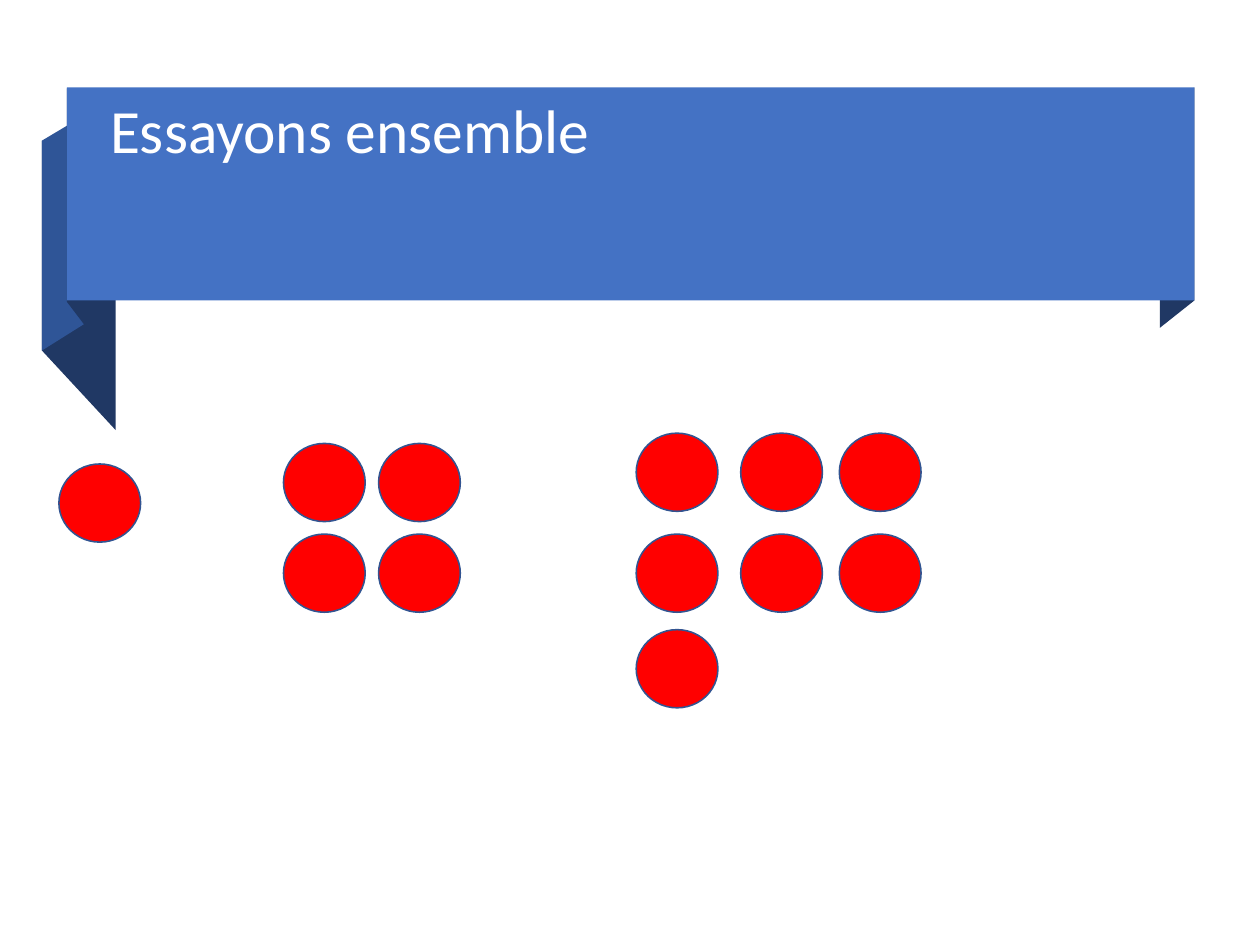
from itertools import product

from pptx import Presentation
from pptx.dml.color import RGBColor
from pptx.enum.shapes import MSO_SHAPE
from pptx.enum.text import MSO_ANCHOR, MSO_AUTO_SIZE, PP_ALIGN
from pptx.util import Cm, Pt

BLUE = RGBColor(0x44, 0x72, 0xC4)
MID = RGBColor(0x2F, 0x55, 0x97)
NAVY = RGBColor(0x20, 0x38, 0x64)
RED = RGBColor(0xFF, 0x00, 0x00)
EDGE = RGBColor(0x32, 0x54, 0x91)
WHITE = RGBColor(0xFF, 0xFF, 0xFF)


class Page:
    font = "Calibri"
    dot_size = Cm(1.83), Cm(1.75)

    def __init__(self, deck):
        self.slide = deck.slides.add_slide(deck.slide_layouts[5])
        self.shapes = self.slide.shapes

    def paint(self, shape, fill, line=None):
        shape.shadow.inherit = False
        shape.fill.solid()
        shape.fill.fore_color.rgb = fill
        if line is None:
            shape.line.fill.background()
        else:
            shape.line.color.rgb = line
            shape.line.width = Pt(1)

    def fold(self, points, fill):
        start, *rest = [(Cm(x), Cm(y)) for x, y in points]
        pen = self.shapes.build_freeform(*start)
        pen.add_line_segments(rest, close=True)
        self.paint(pen.convert_to_shape(), fill)

    def band(self, left, top, width, height, fill):
        box = Cm(left), Cm(top), Cm(width), Cm(height)
        self.paint(self.shapes.add_shape(MSO_SHAPE.RECTANGLE, *box), fill)

    def title(self, text, left, top, width, height):
        head = self.shapes.title
        head.left, head.top = Cm(left), Cm(top)
        head.width, head.height = Cm(width), Cm(height)
        frame = head.text_frame
        frame.text = text
        frame.word_wrap = True
        frame.auto_size = MSO_AUTO_SIZE.NONE
        frame.vertical_anchor = MSO_ANCHOR.MIDDLE
        line = frame.paragraphs[0]
        line.alignment = PP_ALIGN.LEFT
        line.line_spacing = 0.9
        line.font.name = self.font
        line.font.size = Pt(39)
        line.font.color.rgb = WHITE
        self.shapes._spTree.append(head._element)

    def dots(self, spots):
        for x, y in spots:
            dot = self.shapes.add_shape(MSO_SHAPE.OVAL, Cm(x), Cm(y), *self.dot_size)
            self.paint(dot, RED, EDGE)


def main():
    deck = Presentation()
    deck.slide_width, deck.slide_height = Cm(28.22), Cm(21.16)
    page = Page(deck)

    page.fold([(2.59, 9.63), (0.94, 7.85), (0.94, 3.15), (2.59, 4.93)], NAVY)
    page.fold([(1.88, 7.26), (0.94, 7.85), (0.94, 3.15), (1.88, 2.59)], MID)
    page.fold([(1.88, 7.26), (1.5, 6.76), (1.5, 1.98), (1.88, 2.49)], NAVY)
    page.fold([(26.75, 6.73), (25.98, 7.34), (25.98, 2.57), (26.75, 1.96)], NAVY)
    page.band(1.5, 1.96, 25.25, 4.77, BLUE)
    page.title("Essayons ensemble", 2.21, 1.96, 23.75, 2.08)

    page.dots([(1.32, 10.39)])
    page.dots(product([6.35, 8.48], [9.93, 11.96]))
    page.dots(product([14.25, 16.59, 18.8], [9.7, 11.96]))
    page.dots([(14.25, 14.1)])

    deck.save("out.pptx")


if __name__ == "__main__":
    main()
